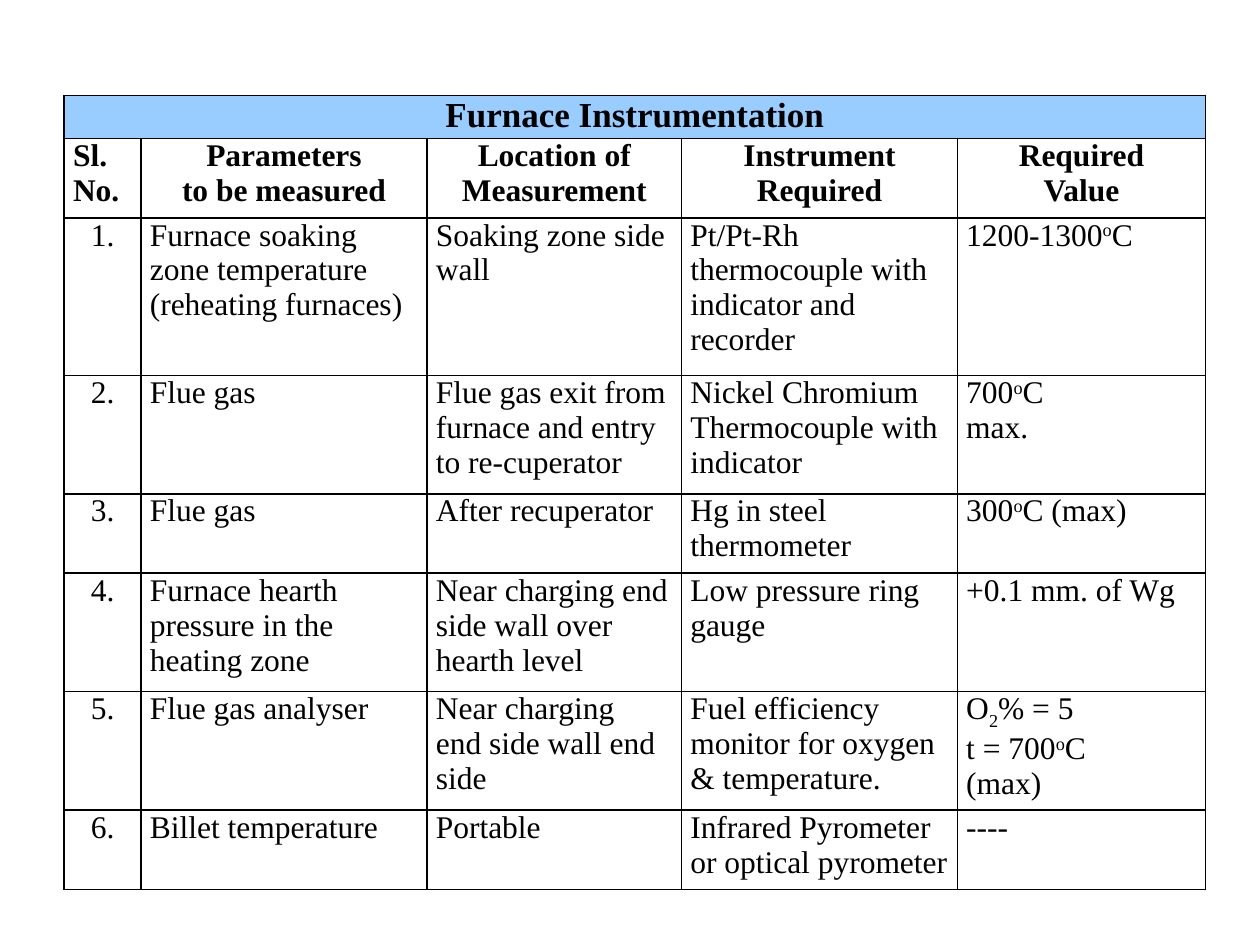
from dataclasses import dataclass

from lxml.etree import SubElement
from pptx import Presentation
from pptx.dml.color import RGBColor
from pptx.enum.text import PP_ALIGN
from pptx.oxml.ns import qn
from pptx.util import Inches, Pt


@dataclass(frozen=True)
class Theme:
    font: str = "Times New Roman"
    ink: str = "000000"
    title_fill: str = "99CCFF"
    body_fill: str = "FFFFFF"
    title_size: int = 20
    body_size: int = 18
    border: int = 1


THEME = Theme()

TITLE = "Furnace Instrumentation"
COLUMN_WIDTHS = [0.61, 2.27, 2.02, 2.19, 1.97]
ROW_HEIGHTS = [0.34, 0.63, 1.25, 0.94, 0.63, 0.94, 0.94, 0.63]
HEADER_ALIGN = [PP_ALIGN.JUSTIFY] + [PP_ALIGN.CENTER] * 4
BODY_ALIGN = [PP_ALIGN.CENTER] + [PP_ALIGN.LEFT] * 3 + [PP_ALIGN.JUSTIFY]

# A line break starts a paragraph; bars set off a raised "o" or lowered "2".
BASELINES = {"o": 30000, "2": -25000}
HEADERS = ["Sl.\nNo.", "Parameters\nto be measured", "Location of\nMeasurement",
           "Instrument\nRequired", "Required\nValue"]
ROWS = [
    ["1.", "Furnace soaking zone temperature (reheating furnaces)",
     "Soaking zone side wall",
     "Pt/Pt-Rh thermocouple with indicator and recorder", "1200-1300|o|C"],
    ["2.", "Flue gas", "Flue gas exit from furnace and entry to re-cuperator",
     "Nickel Chromium Thermocouple with indicator", "700|o|C\nmax."],
    ["3.", "Flue gas", "After recuperator", "Hg in steel thermometer",
     "300|o|C (max)"],
    ["4.", "Furnace hearth pressure in the heating zone",
     "Near charging end side wall over hearth level",
     "Low pressure ring gauge", "+0.1 mm. of Wg"],
    ["5.", "Flue gas analyser", "Near charging\nend side wall end side",
     "Fuel efficiency monitor for oxygen & temperature.",
     "O|2|% = 5\nt = 700|o|C\n(max)"],
    ["6.", "Billet temperature", "Portable",
     "Infrared Pyrometer or optical pyrometer", "----"],
]


def style_cell(cell, fill):
    """Set margins, fill and a border on all four sides."""
    cell.margin_left = cell.margin_right = Inches(0.07)
    cell.margin_top = cell.margin_bottom = 0
    tc_pr = cell._tc.get_or_add_tcPr()
    for side in ("a:lnL", "a:lnR", "a:lnT", "a:lnB"):
        line = SubElement(tc_pr, qn(side), w=str(Pt(THEME.border)))
        solid = SubElement(line, qn("a:solidFill"))
        SubElement(solid, qn("a:srgbClr"), val=THEME.ink)
    cell.fill.solid()
    cell.fill.fore_color.rgb = RGBColor.from_string(fill)


def write_cell(cell, text, align, size=THEME.body_size, bold=False):
    tf = cell.text_frame
    for i, line in enumerate(text.split("\n")):
        p = tf.add_paragraph() if i else tf.paragraphs[0]
        p.alignment = align
        p.font.name = THEME.font
        p.font.size = Pt(size)
        p.font.bold = bold
        p.font.color.rgb = RGBColor.from_string(THEME.ink)
        for part in line.split("|"):
            r = p.add_run()
            r.text = part
            if part in BASELINES:
                r.font._element.set("baseline", str(BASELINES[part]))


def add_instrument_table(slide, left, top, width, height):
    table = slide.shapes.add_table(len(ROW_HEIGHTS), len(COLUMN_WIDTHS),
                                   left, top, width, height).table
    table.first_row = table.horz_banding = False
    for column, share in zip(table.columns, COLUMN_WIDTHS):
        column.width = int(width * share / sum(COLUMN_WIDTHS))
    for row, share in zip(table.rows, ROW_HEIGHTS):
        row.height = int(height * share / sum(ROW_HEIGHTS))

    for i, row in enumerate(table.rows):
        for cell in row.cells:
            style_cell(cell, THEME.body_fill if i else THEME.title_fill)

    title = table.cell(0, 0)
    title.merge(table.cell(0, len(COLUMN_WIDTHS) - 1))
    write_cell(title, TITLE, PP_ALIGN.CENTER, THEME.title_size, bold=True)
    for i, texts in enumerate([HEADERS] + ROWS, start=1):
        is_header = i == 1
        aligns = HEADER_ALIGN if is_header else BODY_ALIGN
        for j, (text, align) in enumerate(zip(texts, aligns)):
            write_cell(table.cell(i, j), text, align, bold=is_header)


def main():
    prs = Presentation()
    prs.slide_width, prs.slide_height = Inches(10), Inches(7.5)
    slide = prs.slides.add_slide(prs.slide_layouts[6])
    add_instrument_table(slide, Inches(0.51), Inches(0.76),
                         Inches(9.06), Inches(6.3))
    prs.save("out.pptx")


if __name__ == "__main__":
    main()
